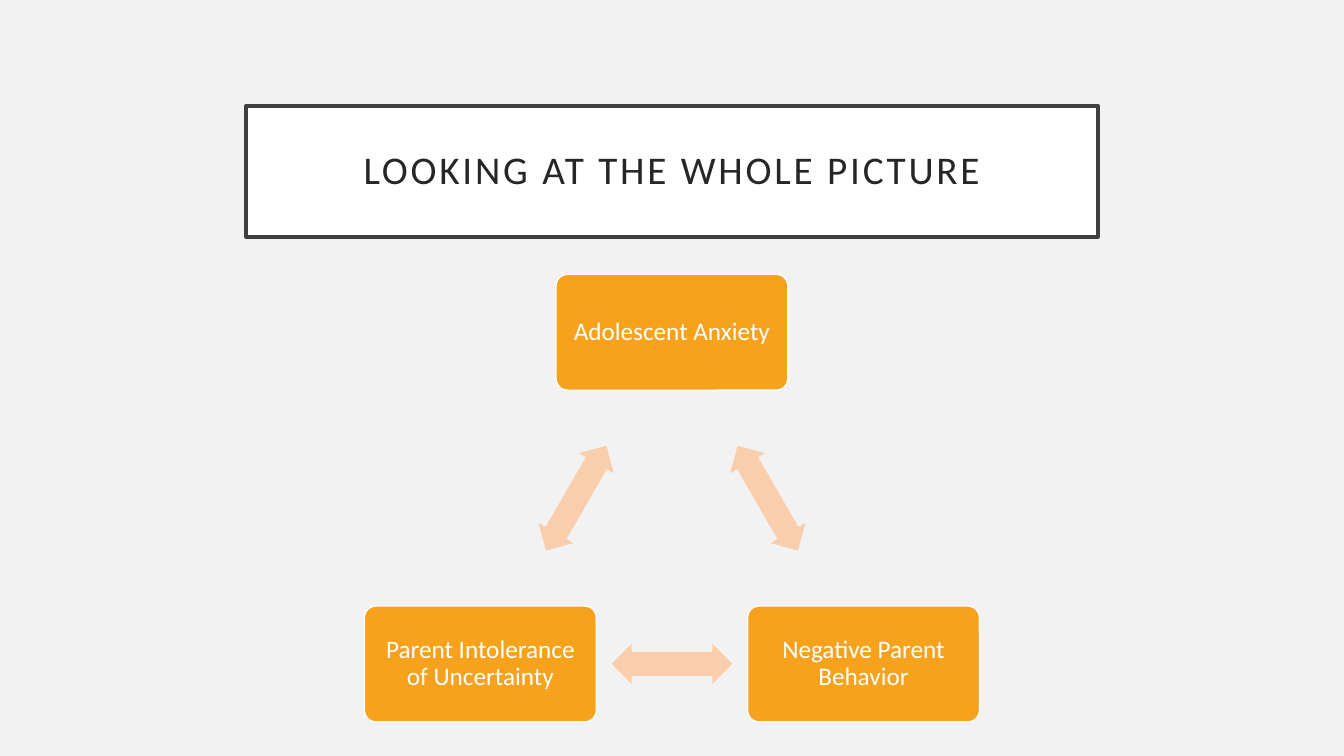
import math
from dataclasses import dataclass

import pptx
import pptx.dml.color
import pptx.enum.shapes
import pptx.enum.text
import pptx.util

Inches = pptx.util.Inches
SHAPES = pptx.enum.shapes.MSO_SHAPE

SLIDE_WIDTH, SLIDE_HEIGHT = 13.33, 7.5
CENTER_X = SLIDE_WIDTH / 2
TRIANGLE_CENTER_Y = 0.732 * SLIDE_HEIGHT
TRIANGLE_RADIUS = 0.2925 * SLIDE_HEIGHT
BOX_SIZE = (2.3, 1.15)
ARROW_SIZE = (1.2, 0.4)
FACTORS = ["Adolescent Anxiety", "Negative Parent Behavior",
           "Parent Intolerance of Uncertainty"]


@dataclass(frozen=True)
class Theme:
    font: str = "Calibri"
    background: str = "F2F2F2"
    white: str = "FFFFFF"
    frame: str = "404040"
    title_text: str = "262626"
    box: str = "F6A21D"
    arrow: str = "FACEAC"
    title_size: int = 28
    box_size: int = 18


THEME = Theme()


def color(code):
    return pptx.dml.color.RGBColor.from_string(code)


def paint(shape, fill, line=None, line_width=1):
    shape.fill.solid()
    shape.fill.fore_color.rgb = color(fill)
    if line:
        shape.line.color.rgb = color(line)
        shape.line.width = pptx.util.Pt(line_width)
    else:
        shape.line.fill.background()


def write(shape, text, size, text_color, inset):
    """Set one centred paragraph and return its run."""
    frame = shape.text_frame
    frame.text = text
    frame.word_wrap = True
    frame.auto_size = pptx.enum.text.MSO_AUTO_SIZE.NONE
    frame.vertical_anchor = pptx.enum.text.MSO_ANCHOR.MIDDLE
    frame.margin_left = frame.margin_right = Inches(inset)
    frame.margin_top = frame.margin_bottom = Inches(inset)
    paragraph = frame.paragraphs[0]
    paragraph.alignment = pptx.enum.text.PP_ALIGN.CENTER
    paragraph.line_spacing = 0.9
    run = paragraph.runs[0]
    run.font.name = THEME.font
    run.font.size = pptx.util.Pt(size)
    run.font.color.rgb = color(text_color)
    return run


def add_centered(slide, kind, center, size, adjustments):
    (x, y), (width, height) = center, size
    shape = slide.shapes.add_shape(
        kind, Inches(x - width / 2), Inches(y - height / 2),
        Inches(width), Inches(height))
    shape.shadow.inherit = False
    for index, value in enumerate(adjustments):
        shape.adjustments[index] = value
    return shape


def add_title(slide, text):
    title = slide.shapes.title
    width, height = 8.45, 1.3
    title.left, title.top = Inches(CENTER_X - width / 2), Inches(0.14 * SLIDE_HEIGHT)
    title.width, title.height = Inches(width), Inches(height)
    paint(title, THEME.white, THEME.frame, 2.5)
    run = write(title, text, THEME.title_size, THEME.title_text, 0.2)
    run.font._element.set("spc", "200")


def add_factor(slide, text, center):
    box = add_centered(slide, SHAPES.ROUNDED_RECTANGLE, center, BOX_SIZE, [0.1])
    paint(box, THEME.box, THEME.white)
    write(box, text, THEME.box_size, THEME.white, 0.1)


def add_arrow(slide, center, rotation):
    arrow = add_centered(slide, SHAPES.LEFT_RIGHT_ARROW, center, ARROW_SIZE, [0.6, 0.5])
    arrow.rotation = rotation
    paint(arrow, THEME.arrow)


def add_cycle(slide, factors):
    """Place the factors clockwise from the top, with an arrow on each side."""
    step = 360 / len(factors)
    corners = []
    for index in range(len(factors)):
        angle = math.radians(index * step)
        corners.append((CENTER_X + TRIANGLE_RADIUS * math.sin(angle),
                        TRIANGLE_CENTER_Y - TRIANGLE_RADIUS * math.cos(angle)))
    for index, factor in enumerate(factors):
        start, end = corners[index], corners[(index + 1) % len(corners)]
        add_factor(slide, factor, start)
        middle = ((start[0] + end[0]) / 2, (start[1] + end[1]) / 2)
        add_arrow(slide, middle, (index + 0.5) * step)


def main():
    presentation = pptx.Presentation()
    presentation.slide_width = Inches(SLIDE_WIDTH)
    presentation.slide_height = Inches(SLIDE_HEIGHT)
    title_only = presentation.slide_layouts.get_by_name("Title Only")
    slide = presentation.slides.add_slide(title_only)
    slide.background.fill.solid()
    slide.background.fill.fore_color.rgb = color(THEME.background)
    add_title(slide, "LOOKING AT THE WHOLE PICTURE")
    add_cycle(slide, FACTORS)
    presentation.save("out.pptx")


if __name__ == "__main__":
    main()
